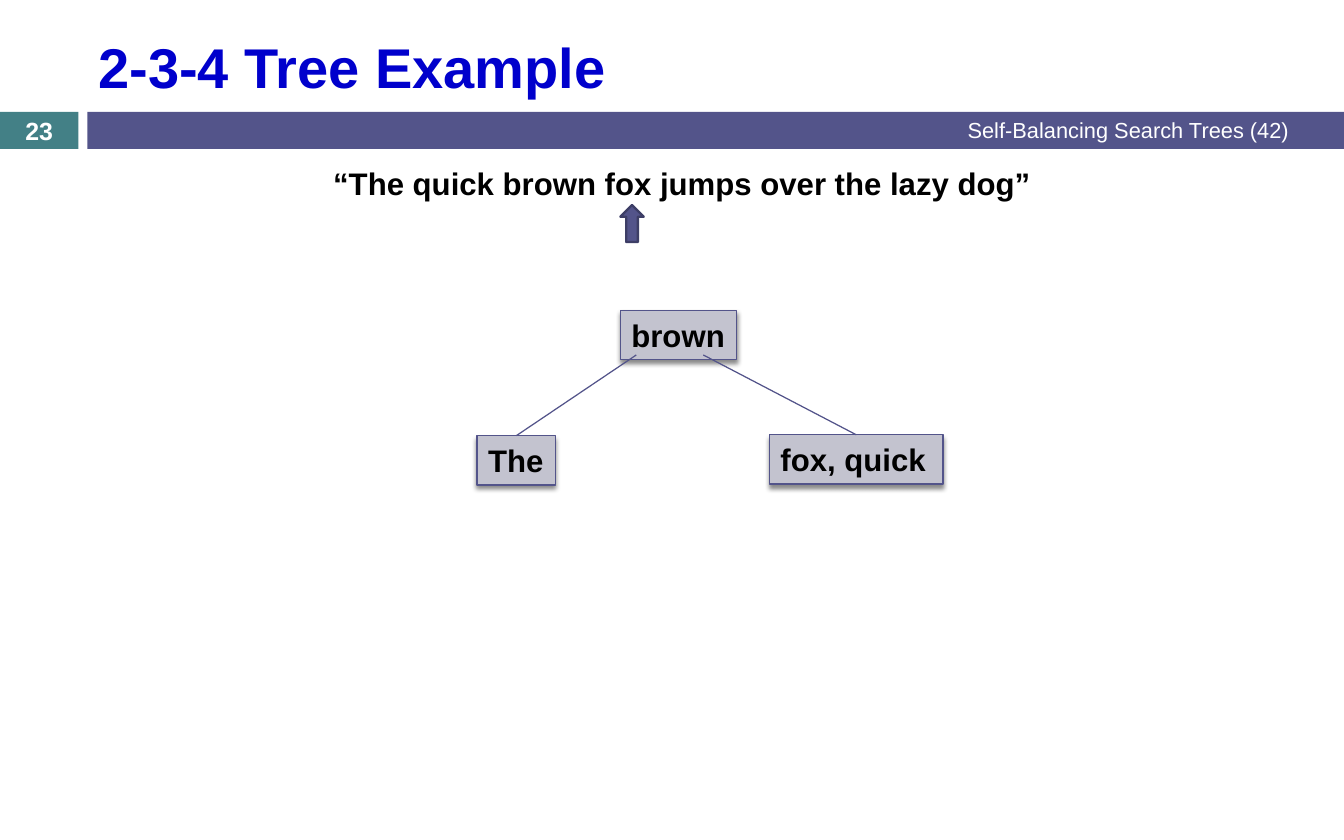
from dataclasses import dataclass

from lxml.etree import SubElement
from pptx import Presentation
from pptx.dml.color import RGBColor
from pptx.enum.shapes import MSO_CONNECTOR, MSO_SHAPE
from pptx.enum.text import MSO_ANCHOR, PP_ALIGN
from pptx.oxml.ns import qn
from pptx.shapes.autoshape import Shape
from pptx.shapes.connector import Connector
from pptx.slide import Slide
from pptx.util import Cm, Pt

COLORS = {
    "teal": "438086",
    "indigo": "53548A",
    "indigo_dark": "3D3E66",
    "node": "C3C3CF",
    "title": "0000CC",
    "black": "000000",
    "white": "FFFFFF",
}
NODE_HEIGHT = 1.12
LINE_WIDTH = 0.79


@dataclass(frozen=True)
class Box:
    left: float
    top: float
    width: float
    height: float

    def lengths(self) -> tuple[Cm, Cm, Cm, Cm]:
        return Cm(self.left), Cm(self.top), Cm(self.width), Cm(self.height)


@dataclass(frozen=True)
class Label:
    text: str
    box: Box
    size: int
    color: str
    bold: bool = True
    align: PP_ALIGN = PP_ALIGN.LEFT
    anchor: MSO_ANCHOR = MSO_ANCHOR.MIDDLE


@dataclass(frozen=True)
class Node:
    keys: str
    left: float
    top: float
    width: float


@dataclass(frozen=True)
class Edge:
    start_x: float
    start_y: float
    child: Node


ROOT = Node("brown", 14.07, 7.04, 2.64)
LEFT_CHILD = Node("The", 10.82, 9.88, 1.78)
RIGHT_CHILD = Node("fox, quick ", 17.45, 9.86, 3.94)
NODES = [LEFT_CHILD, ROOT, RIGHT_CHILD]
EDGES = [Edge(15.95, 8.05, RIGHT_CHILD), Edge(14.43, 8.05, LEFT_CHILD)]

NUMBER_BOX = Box(0, 2.54, 1.78, 0.84)
BANNER_BOX = Box(1.98, 2.54, 28.5, 0.84)
ARROW_BOX = Box(14.07, 4.65, 0.53, 0.84)
LABELS = [
    Label("Self-Balancing Search Trees (42)", Box(11.43, 2.51, 18.06, 0.89),
          14, "white", bold=False, align=PP_ALIGN.RIGHT),
    Label("23", NUMBER_BOX, 16, "white", align=PP_ALIGN.CENTER),
    Label("“The quick brown fox jumps over the lazy dog” ",
          Box(4.24, 3.61, 22.66, 1.27), 20, "black",
          align=PP_ALIGN.CENTER, anchor=MSO_ANCHOR.TOP),
    Label("2-3-4 Tree Example", Box(1.98, 0.48, 27.18, 2.03), 36, "title"),
]


def rgb(name: str) -> RGBColor:
    return RGBColor.from_string(COLORS[name])


def write_text(shape: Shape, label: Label, wrap: bool = True) -> None:
    frame = shape.text_frame
    frame.word_wrap = wrap
    frame.vertical_anchor = label.anchor
    paragraph = frame.paragraphs[0]
    paragraph.alignment = label.align
    run = paragraph.add_run()
    run.text = label.text
    run.font.name = "Arial"
    run.font.size = Pt(label.size)
    run.font.bold = label.bold
    run.font.color.rgb = rgb(label.color)


def add_label(slide: Slide, label: Label) -> None:
    write_text(slide.shapes.add_textbox(*label.box.lengths()), label)


def add_filled_shape(slide: Slide, kind: MSO_SHAPE, box: Box, fill: str,
                     line: str | None = None, width: float = LINE_WIDTH) -> Shape:
    shape = slide.shapes.add_shape(kind, *box.lengths())
    shape.shadow.inherit = False
    shape.fill.solid()
    shape.fill.fore_color.rgb = rgb(fill)
    if line is None:
        shape.line.fill.background()
    else:
        shape.line.color.rgb = rgb(line)
        shape.line.width = Pt(width)
    return shape


def add_drop_shadow(shape: Shape) -> None:
    effects = shape.element.spPr.find(qn("a:effectLst"))
    shadow = SubElement(effects, qn("a:outerShdw"), blurRad=str(Pt(3)),
                        dist=str(Pt(2.4)), dir="5400000", rotWithShape="0")
    color = SubElement(shadow, qn("a:srgbClr"), val=COLORS["black"])
    SubElement(color, qn("a:alpha"), val="45000")


def add_node(slide: Slide, node: Node) -> None:
    box = Box(node.left, node.top, node.width, NODE_HEIGHT)
    shape = add_filled_shape(slide, MSO_SHAPE.RECTANGLE, box, "node", "indigo")
    add_drop_shadow(shape)
    label = Label(node.keys, box, 20, "black", anchor=MSO_ANCHOR.TOP)
    write_text(shape, label, wrap=False)


def add_edge(slide: Slide, edge: Edge) -> Connector:
    child = edge.child
    connector = slide.shapes.add_connector(
        MSO_CONNECTOR.STRAIGHT, Cm(edge.start_x), Cm(edge.start_y),
        Cm(child.left + child.width / 2), Cm(child.top))
    connector.line.color.rgb = rgb("indigo")
    connector.line.width = Pt(LINE_WIDTH)
    SubElement(connector.element.spPr, qn("a:effectLst"))
    return connector


def main() -> None:
    presentation = Presentation()
    presentation.slide_width = Cm(30.48)
    presentation.slide_height = Cm(19.05)
    slide = presentation.slides.add_slide(presentation.slide_layouts[6])

    add_filled_shape(slide, MSO_SHAPE.RECTANGLE, NUMBER_BOX, "teal")
    add_filled_shape(slide, MSO_SHAPE.RECTANGLE, BANNER_BOX, "indigo")
    for node in NODES:
        add_node(slide, node)
    for edge in EDGES:
        add_edge(slide, edge)
    for label in LABELS:
        add_label(slide, label)
    add_filled_shape(slide, MSO_SHAPE.UP_ARROW, ARROW_BOX,
                     "indigo", "indigo_dark", 1.5)

    presentation.save("out.pptx")


if __name__ == "__main__":
    main()
